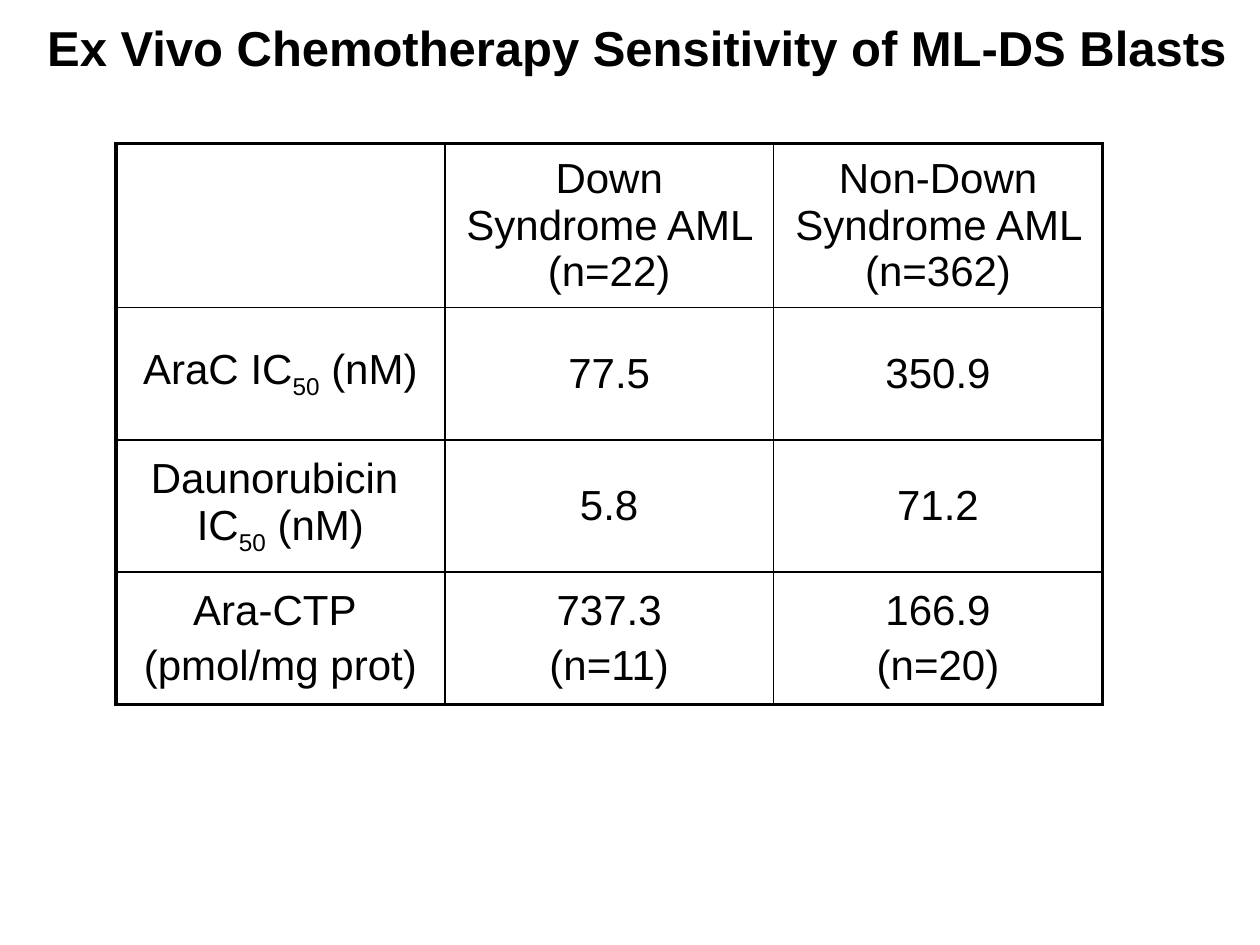
from dataclasses import dataclass

from lxml import etree
from pptx import Presentation
from pptx.dml.color import RGBColor
from pptx.enum.text import MSO_ANCHOR, PP_ALIGN
from pptx.oxml.ns import qn
from pptx.util import Inches, Pt

CENTER, MIDDLE = PP_ALIGN.CENTER, MSO_ANCHOR.MIDDLE
COLORS = {"ink": "000000"}
INK = RGBColor.from_string(COLORS["ink"])
TITLE_FORMAT = {"name": "Arial", "size": Pt(28), "bold": True}
CELL_FORMAT = {"name": "Arial", "size": Pt(24), "bold": False}
OUTER, INNER = Pt(2.25), Pt(1)
TITLE = " Ex Vivo Chemotherapy Sensitivity of ML-DS Blasts"


@dataclass
class Row:
    height: float
    texts: tuple[str, str, str]


# Underscores enclose subscripts, \n starts a paragraph, \v breaks a line
ROWS = [
    Row(1.3, ("", "Down Syndrome AML (n=22)", "Non-Down Syndrome AML (n=362)")),
    Row(1.05, ("AraC IC_50_ (nM)", "77.5", "350.9")),
    Row(1.05, ("Daunorubicin \vIC_50_ (nM)", "5.8", "71.2")),
    Row(1.05, ("Ara-CTP \n(pmol/mg prot)", "737.3\n(n=11)", "166.9\n(n=20)")),
]
COL_WIDTH = 2.61


def format_font(font, values: dict) -> None:
    for name, value in values.items():
        setattr(font, name, value)
    font.color.rgb = INK


def add_runs(p, text: str) -> None:
    for i, part in enumerate(text.split("_")):
        for j, piece in enumerate(part.split("\v")):
            if j:
                p.add_line_break()
            r = p.add_run()
            r.text = piece
            format_font(r.font, CELL_FORMAT)
            if i % 2:
                r._r.get_or_add_rPr().set("baseline", "-25000")


def fill_cell(cell, text: str) -> None:
    cell.vertical_anchor = MIDDLE
    tf = cell.text_frame
    for i, line in enumerate(text.split("\n")):
        p = tf.add_paragraph() if i else tf.paragraphs[0]
        p.alignment = CENTER
        if i:
            p.space_before = Pt(4.8)
        format_font(p.font, CELL_FORMAT)
        if line:
            add_runs(p, line)


def set_borders(cell, widths: dict[str, int]) -> None:
    tc_pr = cell._tc.get_or_add_tcPr()
    for side, width in widths.items():
        ln = etree.SubElement(tc_pr, qn(f"a:ln{side}"), w=str(width))
        fill = etree.SubElement(ln, qn("a:solidFill"))
        etree.SubElement(fill, qn("a:srgbClr"), val=COLORS["ink"])


def add_results_table(s, left: float, top: float, rows: list[Row]) -> None:
    n_rows, n_cols = len(rows), len(rows[0].texts)
    table = s.shapes.add_table(
        n_rows, n_cols, Inches(left), Inches(top),
        Inches(COL_WIDTH * n_cols), Inches(sum(row.height for row in rows)),
    ).table
    table.first_row = table.horz_banding = False
    for column in table.columns:
        column.width = Inches(COL_WIDTH)
    for i, row in enumerate(rows):
        table.rows[i].height = Inches(row.height)
        for j, text in enumerate(row.texts):
            cell = table.cell(i, j)
            fill_cell(cell, text)
            set_borders(cell, {
                "L": OUTER if j == 0 else INNER,
                "R": OUTER if j == n_cols - 1 else INNER,
                "T": OUTER if i == 0 else INNER,
                "B": OUTER if i == n_rows - 1 else INNER,
            })
            cell.fill.background()


def add_title(s, text: str) -> None:
    sp = s.shapes.title
    sp.left, sp.top = Inches(-0.25), Inches(-0.25)
    sp.width, sp.height = Inches(10.5), Inches(1.25)
    tf = sp.text_frame
    tf.word_wrap = True
    tf.vertical_anchor = MIDDLE
    p = tf.paragraphs[0]
    p.alignment = CENTER
    r = p.add_run()
    r.text = text
    format_font(r.font, TITLE_FORMAT)


def main() -> None:
    prs = Presentation()
    prs.slide_width, prs.slide_height = Inches(10), Inches(7.5)
    s = prs.slides.add_slide(prs.slide_layouts[5])  # title only
    add_title(s, TITLE)
    add_results_table(s, 0.92, 1.14, ROWS)
    prs.save("out.pptx")


if __name__ == "__main__":
    main()
